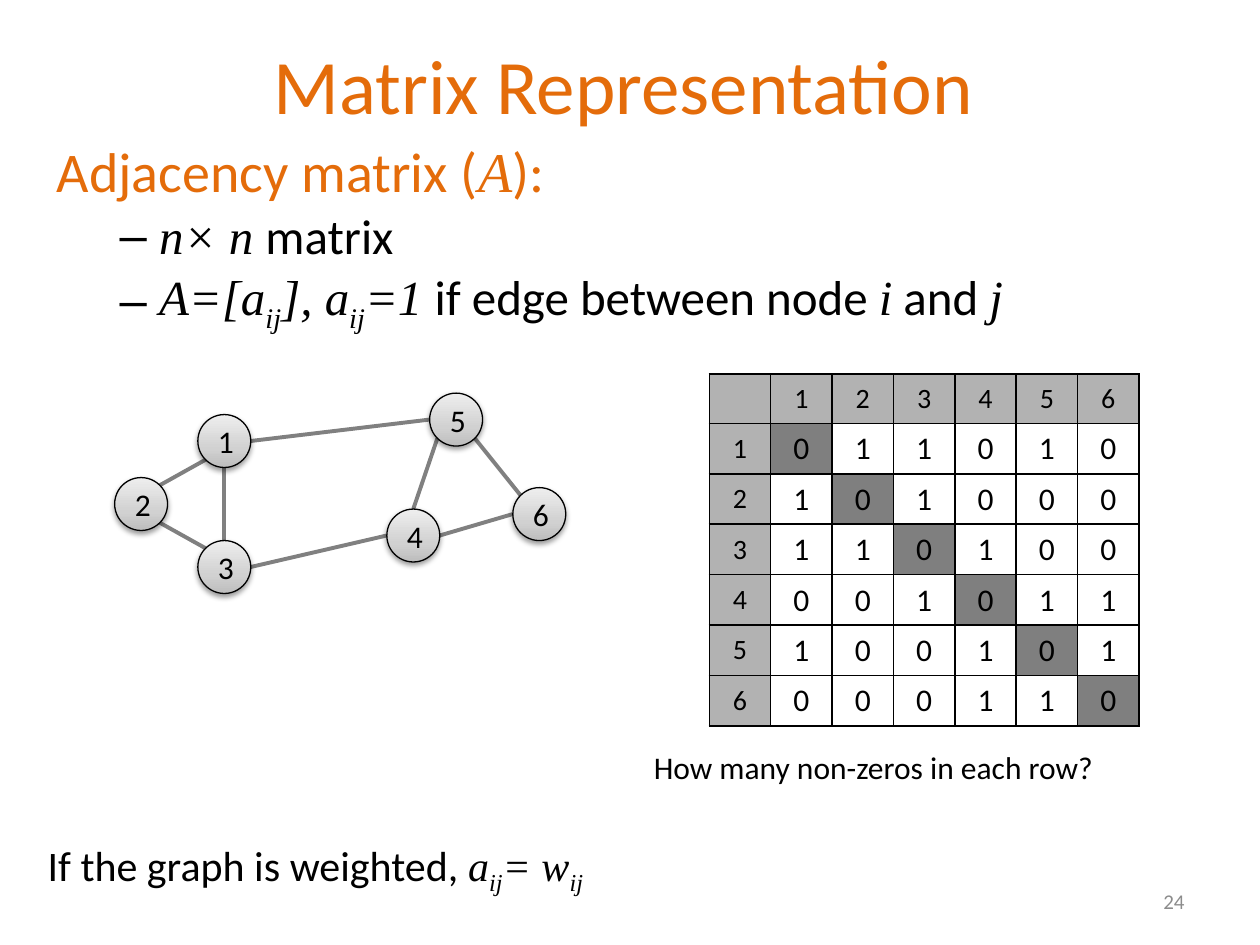
import dataclasses
import math

import pptx
import pptx.dml.color
import pptx.enum.shapes
import pptx.enum.text
import pptx.oxml
import pptx.oxml.ns
import pptx.util
from lxml import etree

Inches = pptx.util.Inches
Pt = pptx.util.Pt
ALIGN = pptx.enum.text.PP_ALIGN
ANCHOR = pptx.enum.text.MSO_ANCHOR
qn = pptx.oxml.ns.qn


@dataclasses.dataclass(frozen=True)
class Theme:
    """Colours, fonts and type sizes of the slide."""
    accent: str = "E46C0A"
    ink: str = "000000"
    muted: str = "8C8C8C"
    edge: str = "808080"
    header: str = "B2B2B2"
    node_stops: tuple = ((0, "BDBDBD"), (35, "D1D1D1"), (100, "EEEEEE"))
    sans: str = "Calibri"
    math: str = "Times New Roman"
    title: int = 44
    lead: int = 32
    item: int = 28
    remark: int = 24
    label: int = 18
    index: int = 16
    number: int = 12


THEME = Theme()
NODE_SIZE = 0.42
NODES = {1: (1.57, 3.29), 2: (0.91, 3.79), 3: (1.57, 4.29),
         4: (3.07, 4.04), 5: (3.41, 3.12), 6: (4.07, 3.87)}
RIGHT, LOWER_RIGHT, BOTTOM, LOWER_LEFT, LEFT, UPPER_LEFT, TOP, UPPER_RIGHT = range(0, 360, 45)
EDGES = [(1, LOWER_LEFT, 2, UPPER_RIGHT), (2, LOWER_RIGHT, 3, UPPER_LEFT),
         (1, BOTTOM, 3, TOP), (1, RIGHT, 5, LEFT), (3, RIGHT, 4, LEFT),
         (5, LOWER_RIGHT, 6, UPPER_LEFT), (4, RIGHT, 6, LEFT), (5, LOWER_LEFT, 4, TOP)]


def rgb(value):
    """Turn a hex string into a colour."""
    return pptx.dml.color.RGBColor.from_string(value)


def place(shape, left, top, width, height):
    """Move and size a shape in inches."""
    shape.left, shape.top = Inches(left), Inches(top)
    shape.width, shape.height = Inches(width), Inches(height)


def set_space_before(paragraph, percent):
    """Set the space before a paragraph as a share of its line."""
    paragraph.space_before = Pt(0)
    spacing = paragraph._p.pPr.find(qn("a:spcBef"))
    spacing.clear()
    etree.SubElement(spacing, qn("a:spcPct"), val=str(percent * 1000))


def write(paragraph, runs, size, color, align=None):
    """Write plain text, or (text, style) runs styled plain, math or sub."""
    paragraph.font.size, paragraph.font.color.rgb = Pt(size), rgb(color)
    paragraph.alignment = align
    if isinstance(runs, str):
        paragraph.font.name = THEME.sans
        runs = [(runs, None)] if runs else []
    for text, style in runs:
        run = paragraph.add_run()
        run.text = text
        if style:
            run.font.name = THEME.sans if style == "plain" else THEME.math
            run.font.italic = style != "plain"
        if style == "sub":
            run._r.get_or_add_rPr().set("baseline", "-25000")


def add_text(slide, box, runs, size, color=THEME.ink, align=None, anchor=ANCHOR.TOP):
    """Add a one-paragraph text box."""
    frame = slide.shapes.add_textbox(*map(Inches, box)).text_frame
    frame.word_wrap, frame.vertical_anchor = True, anchor
    write(frame.paragraphs[0], runs, size, color, align)


def fill_title(slide):
    """Fill the title placeholder."""
    title = slide.shapes.title
    place(title, 0.45, 0.04, 9, 1.25)
    write(title.text_frame.paragraphs[0], "Matrix Representation",
          THEME.title, THEME.accent, ALIGN.CENTER)


def fill_definition(slide):
    """Fill the body placeholder with the lead line and its two items."""
    body = slide.placeholders[1]
    place(body, 0.35, 1.03, 9, 4.95)
    frame = body.text_frame
    lead = frame.paragraphs[0]
    write(lead, [("Adjacency matrix (", "plain"), ("A", "math"), ("):", "plain")],
          THEME.lead, THEME.accent)
    properties = lead._p.get_or_add_pPr()
    properties.set("marL", "0")
    properties.set("indent", "0")
    properties.insert(0, etree.Element(qn("a:buNone")))
    items = [
        [("n× n ", "math"), ("matrix", "plain")],
        [("A=[a", "math"), ("ij", "sub"), ("], a", "math"), ("ij", "sub"),
         ("=1 ", "math"), ("if edge between node ", "plain"), ("i", "math"),
         (" and ", "plain"), ("j", "math")],
    ]
    for runs in items:
        item = frame.add_paragraph()
        item.level = 1
        write(item, runs, THEME.item, THEME.ink)
        set_space_before(item, 5)


def rim_point(node, angle):
    """Return the point on a node's rim at a clockwise angle."""
    radius = NODE_SIZE / 2
    left, top = NODES[node]
    return (Inches(left + radius + radius * math.cos(math.radians(angle))),
            Inches(top + radius + radius * math.sin(math.radians(angle))))


def add_edge(graph, start, start_angle, end, end_angle):
    """Draw an edge between the rims of two nodes."""
    edge = graph.shapes.add_connector(pptx.enum.shapes.MSO_CONNECTOR.STRAIGHT,
                                      *rim_point(start, start_angle),
                                      *rim_point(end, end_angle))
    edge.line.color.rgb, edge.line.width = rgb(THEME.edge), Pt(2.25)
    etree.SubElement(edge._element.spPr, qn("a:effectLst"))


def add_node(graph, number):
    """Draw a numbered node with a grey gradient and a soft shadow."""
    left, top = NODES[number]
    node = graph.shapes.add_shape(pptx.enum.shapes.MSO_SHAPE.OVAL, Inches(left), Inches(top),
                                  Inches(NODE_SIZE), Inches(NODE_SIZE))
    node.fill.gradient()
    node.fill.gradient_angle = 90
    properties = node._element.spPr
    stops = properties.find(".//" + qn("a:gsLst"))
    stops.clear()
    for position, color in THEME.node_stops:
        stop = etree.SubElement(stops, qn("a:gs"), pos=str(position * 1000))
        etree.SubElement(stop, qn("a:srgbClr"), val=color)
    node.line.color.rgb, node.line.width = rgb(THEME.ink), Pt(0.75)
    node.shadow.inherit = False
    shadow = etree.SubElement(properties.find(qn("a:effectLst")), qn("a:outerShdw"),
                              blurRad=str(Pt(3.1)), dist=str(Pt(1.6)), dir="5400000")
    shade = etree.SubElement(shadow, qn("a:srgbClr"), val=THEME.ink)
    etree.SubElement(shade, qn("a:alpha"), val="38000")
    node.text_frame.vertical_anchor = ANCHOR.MIDDLE
    write(node.text_frame.paragraphs[0], str(number), THEME.label, THEME.ink, ALIGN.CENTER)


def add_graph(slide):
    """Draw the graph as one group, edges behind nodes."""
    graph = slide.shapes.add_group_shape()
    for edge in EDGES:
        add_edge(graph, *edge)
    for number in NODES:
        add_node(graph, number)


def style_cell(cell, row, column):
    """Fill and border a cell by its place in the matrix."""
    properties = cell._tc.get_or_add_tcPr()
    for side in ("a:lnL", "a:lnR", "a:lnT", "a:lnB"):
        border = etree.SubElement(properties, qn(side), w=str(Pt(1)))
        paint = etree.SubElement(border, qn("a:solidFill"))
        etree.SubElement(paint, qn("a:srgbClr"), val=THEME.ink)
    if 0 in (row, column):
        cell.fill.solid()
        cell.fill.fore_color.rgb = rgb(THEME.header)
        cell.margin_left = cell.margin_right = Inches(0.08)
    elif row == column:
        cell.fill.solid()
        cell.fill.fore_color.rgb = rgb(THEME.ink)
        shade = properties.find(qn("a:solidFill")).find(qn("a:srgbClr"))
        etree.SubElement(shade, qn("a:alpha"), val="50000")
    else:
        cell.fill.background()


def add_matrix(slide):
    """Add the adjacency matrix that follows from the edges."""
    count = len(NODES) + 1
    linked = {frozenset((start, end)) for start, _, end, _ in EDGES}
    matrix = slide.shapes.add_table(count, count, Inches(5.63), Inches(2.97),
                                    Inches(3.41), Inches(0.39 * count)).table
    matrix.first_row = matrix.horz_banding = False
    for row in range(count):
        for column in range(count):
            cell = matrix.cell(row, column)
            style_cell(cell, row, column)
            cell.vertical_anchor = ANCHOR.MIDDLE
            heading = 0 in (row, column)
            value = row + column if heading else int(frozenset((row, column)) in linked)
            entry = cell.text_frame.paragraphs[0]
            write(entry, str(value) if row or column else "",
                  THEME.index if heading else THEME.label, THEME.ink, ALIGN.CENTER)
            set_space_before(entry, 20)


def main():
    """Build and save the slide."""
    deck = pptx.Presentation()
    deck.slide_width, deck.slide_height = Inches(10), Inches(7.5)
    slide = deck.slides.add_slide(deck.slide_layouts[1])
    fill_title(slide)
    fill_definition(slide)
    add_text(slide, (7.17, 6.95, 2.33, 0.4), "24", THEME.number, THEME.muted,
             ALIGN.RIGHT, ANCHOR.MIDDLE)
    add_graph(slide)
    add_matrix(slide)
    add_text(slide, (0.28, 6.61, 7.32, 0.5),
             [("If the graph is weighted, ", "plain"), ("a", "math"), ("ij", "sub"),
              ("= w", "math"), ("ij", "sub")], THEME.remark)
    add_text(slide, (5.09, 5.89, 4.41, 0.4), "How many non-zeros in each row?", THEME.label)
    deck.save("out.pptx")


if __name__ == "__main__":
    main()
